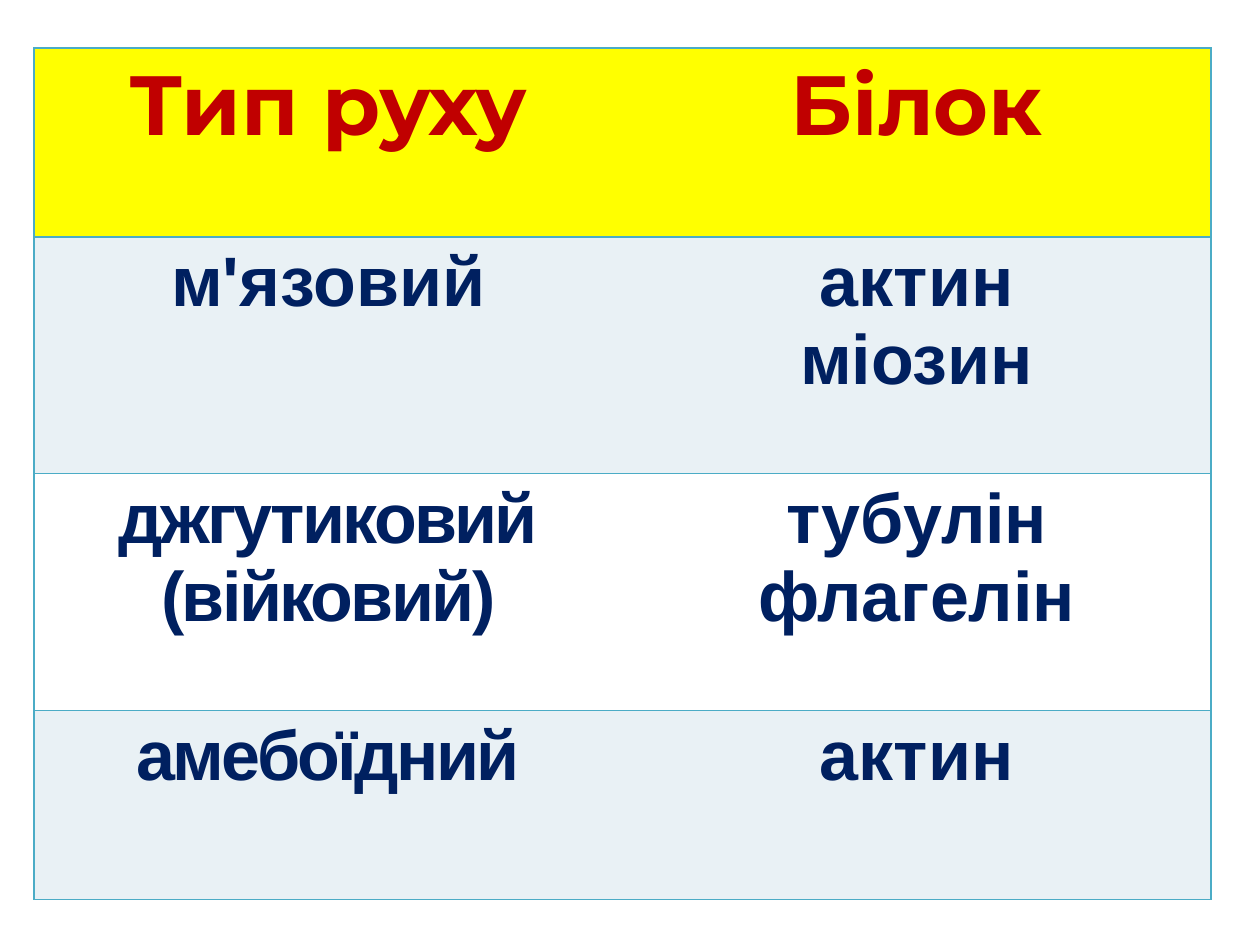
import pptx
import pptx.dml.color
import pptx.enum.text
import pptx.oxml
import pptx.oxml.ns
import pptx.util

RGB = pptx.dml.color.RGBColor
YELLOW = RGB(0xFF, 0xFF, 0x00)
PALE_BLUE = RGB(0xE9, 0xF1, 0xF5)
WHITE = RGB(0xFF, 0xFF, 0xFF)
RED = RGB(0xC0, 0x00, 0x00)
NAVY = RGB(0x00, 0x20, 0x60)
TEAL = RGB(0x4B, 0xAC, 0xC6)

# row height in inches, fill, movement type, proteins, letter spacing of the type
ROWS = [
    (1.5, YELLOW, "Тип руху", "Білок", 0),
    (1.88, PALE_BLUE, "м'язовий", "актин\nміозин", 0),
    (1.88, WHITE, "джгутиковий\n(війковий)", "тубулін\nфлагелін", -1.5),
    (1.5, PALE_BLUE, "амебоїдний", "актин", -1.5),
]
COLUMN_WIDTH = pptx.util.Inches(4.67)


def add_border(cell, side, color):
    """Draw one side (L, R, T or B) of a cell; a color of None hides it."""
    paint = f'<a:solidFill><a:srgbClr val="{color}"/></a:solidFill>' if color else "<a:noFill/>"
    cell._tc.get_or_add_tcPr().append(pptx.oxml.parse_xml(
        f'<a:ln{side} {pptx.oxml.ns.nsdecls("a")} w="12700">{paint}</a:ln{side}>'))


prs = pptx.Presentation()
prs.slide_width = pptx.util.Inches(10)
prs.slide_height = pptx.util.Inches(7.5)
s = prs.slides.add_slide(prs.slide_layouts[6])

table = s.shapes.add_table(
    len(ROWS), 2, pptx.util.Inches(0.27), pptx.util.Inches(0.38),
    2 * COLUMN_WIDTH, pptx.util.Inches(sum(row[0] for row in ROWS))).table
table.first_row = False
table.horz_banding = False
for column in table.columns:
    column.width = COLUMN_WIDTH

for i, (height, fill, movement, proteins, spacing) in enumerate(ROWS):
    table.rows[i].height = pptx.util.Inches(height)
    header = i == 0
    for j, text in enumerate((movement, proteins)):
        cell = table.cell(i, j)
        inner_side = "R" if j == 0 else "L"
        for side in "LRTB":
            add_border(cell, side, None if side == inner_side else TEAL)
        cell.fill.solid()
        cell.fill.fore_color.rgb = fill
        cell.text_frame.text = text
        for p in cell.text_frame.paragraphs:
            p.alignment = pptx.enum.text.PP_ALIGN.CENTER
            for r in p.runs:
                r.font.name = "Montserrat" if header else "Arial"
                r.font.size = pptx.util.Pt(48 if header else 40)
                r.font.bold = True
                r.font.color.rgb = RED if header else NAVY
                if j == 0 and spacing:
                    r.font._element.set("spc", str(int(spacing * 100)))

prs.save("out.pptx")
